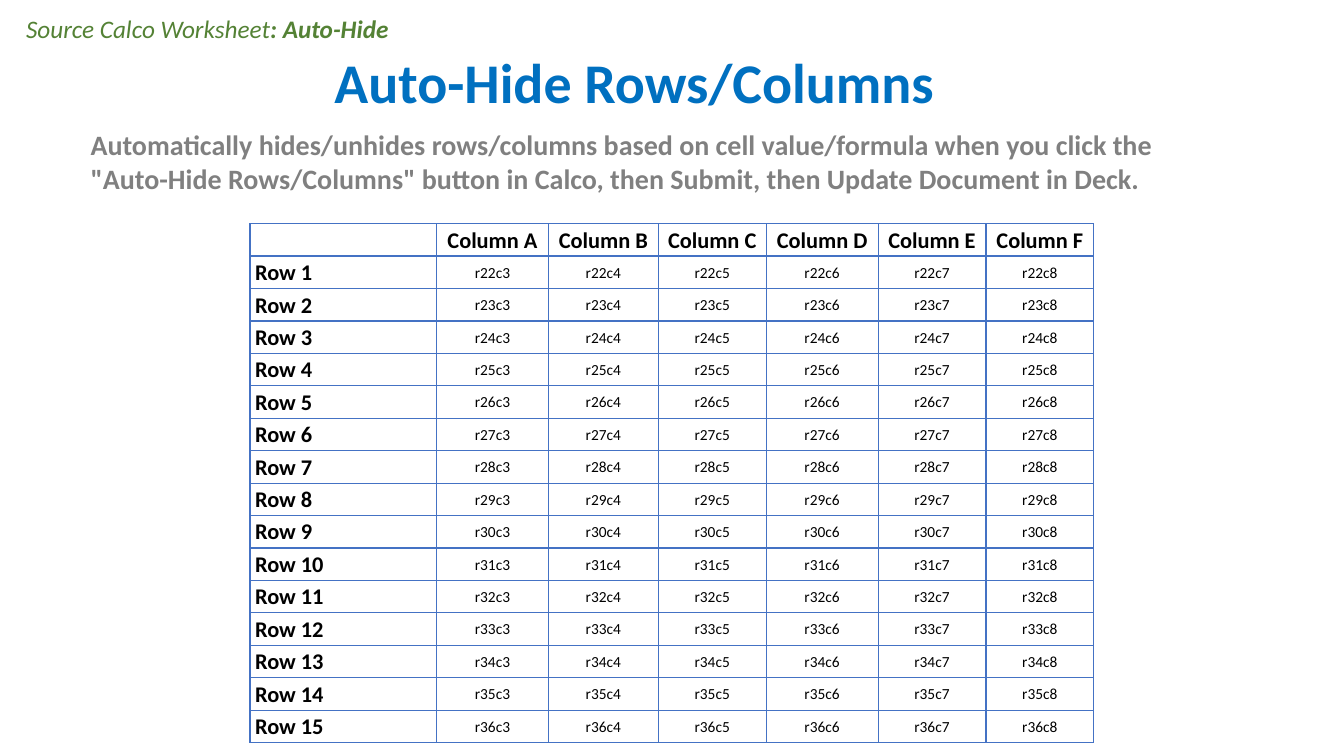
from lxml import etree
from pptx import Presentation
from pptx.dml import color
from pptx.enum import text
from pptx.oxml import ns
from pptx.util import Inches, Pt

FONT = "Calibri"
BLACK, WHITE, BLUE, GRAY, GREEN, RULE = "000000", "FFFFFF", "0070C0", "808080", "548235", "4472C4"
HEADING = "Auto-Hide Rows/Columns"
SUMMARY = ('Automatically hides/unhides rows/columns based on cell value/formula when you click the '
           '"Auto-Hide Rows/Columns" button in Calco, then Submit, then Update Document in Deck.')
SOURCE = [("Source Calco Worksheet", False), (": Auto-Hide", True)]
HEADERS = [""] + [f"Column {letter}" for letter in "ABCDEF"]
ROWS = [[f"Row {n}"] + [f"r{n + 21}c{c}" for c in range(3, 9)] for n in range(1, 16)]
GRID = [HEADERS] + ROWS
COLUMN_WIDTHS = [1.85, 1.11, 1.09, 1.07, 1.11, 1.07, 1.07]
ROW_HEIGHT = 0.32


def rgb(hex_code):
    return color.RGBColor.from_string(hex_code)


def add_run(paragraph, words, size, hex_code, bold=False, italic=False):
    run = paragraph.add_run()
    run.text = words
    run.font.name, run.font.size = FONT, Pt(size)
    run.font.bold, run.font.italic = bold, italic
    run.font.color.rgb = rgb(hex_code)


def add_textbox(slide, left, top, width, height):
    frame = slide.shapes.add_textbox(*map(Inches, (left, top, width, height))).text_frame
    frame.word_wrap = True
    frame.auto_size = text.MSO_AUTO_SIZE.SHAPE_TO_FIT_TEXT
    return frame.paragraphs[0]


def set_borders(cell, widths):
    properties = cell._tc.get_or_add_tcPr()
    for position, (side, width) in enumerate(widths.items()):
        line = etree.Element(ns.qn(f"a:ln{side}"), w=str(Pt(width)))
        fill = etree.SubElement(line, ns.qn("a:solidFill"))
        etree.SubElement(fill, ns.qn("a:srgbClr"), val=RULE)
        properties.insert(position, line)


def fill_cell(cell, words, row, column):
    label = row == 0 or column == 0
    size = 16 if label else 11
    cell.margin_left = cell.margin_right = Inches(0.05)
    cell.margin_top, cell.margin_bottom = Inches(0.03), Inches(0.02)
    cell.vertical_anchor = text.MSO_ANCHOR.BOTTOM if row == 0 else text.MSO_ANCHOR.MIDDLE
    cell.fill.solid()
    cell.fill.fore_color.rgb = rgb(WHITE)
    set_borders(cell, {"L": 1, "R": 1, "T": 2 if row == 1 else 1, "B": 2 if row == 0 else 1})
    paragraph = cell.text_frame.paragraphs[0]
    paragraph.alignment = text.PP_ALIGN.LEFT if column == 0 else text.PP_ALIGN.CENTER
    if words:
        add_run(paragraph, words, size, BLACK, bold=label)
    else:
        etree.SubElement(paragraph._p, ns.qn("a:endParaRPr"), sz=str(size * 100))


deck = Presentation()
deck.slide_width, deck.slide_height = Inches(13.33), Inches(7.5)
slide = deck.slides.add_slide(deck.slide_layouts[5])

heading = slide.shapes.title
heading.left, heading.top, heading.width, heading.height = map(Inches, (0.54, 0.31, 11.5, 1.07))
heading.text_frame.auto_size = text.MSO_AUTO_SIZE.NONE
heading.text_frame.vertical_anchor = text.MSO_ANCHOR.MIDDLE
heading_line = heading.text_frame.paragraphs[0]
heading_line.alignment = text.PP_ALIGN.CENTER
heading_line.line_spacing = 0.9
add_run(heading_line, HEADING, 40, BLUE, bold=True)

grid = slide.shapes.add_table(len(GRID), len(HEADERS), Inches(2.48), Inches(2.22),
                              Inches(sum(COLUMN_WIDTHS)), Inches(ROW_HEIGHT * len(GRID))).table
grid.first_row = grid.horz_banding = False
for column, width in zip(grid.columns, COLUMN_WIDTHS):
    column.width = Inches(width)
for r, entries in enumerate(GRID):
    grid.rows[r].height = Inches(ROW_HEIGHT)
    for c, words in enumerate(entries):
        fill_cell(grid.cell(r, c), words, r, c)

add_run(add_textbox(slide, 0.8, 1.22, 11.06, 0.77), SUMMARY, 20, GRAY, bold=True)

source_line = add_textbox(slide, 0.16, 0.08, 7.76, 0.4)
source_line.space_after = Pt(4)
for words, bold in SOURCE:
    add_run(source_line, words, 18, GREEN, bold=bold, italic=True)

deck.save("out.pptx")
